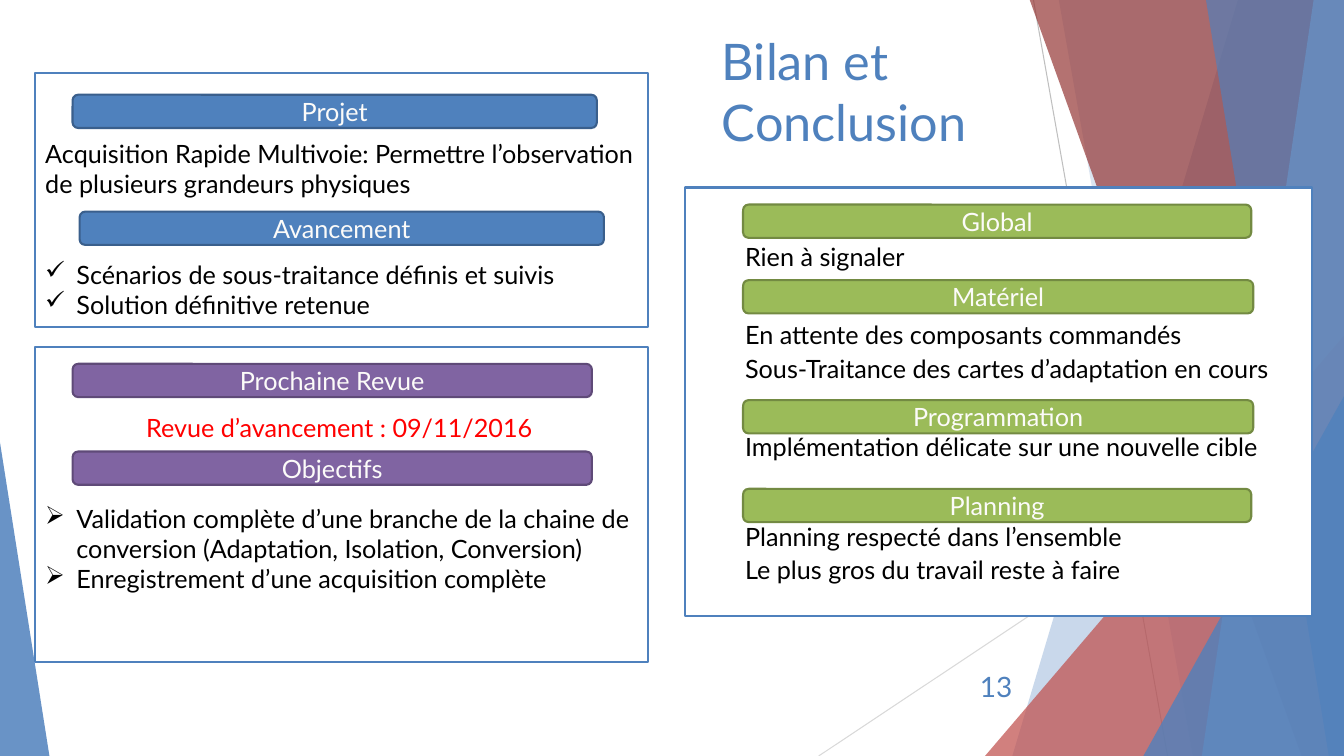
from lxml import etree
from pptx import Presentation
from pptx import util as u
from pptx.dml import color
from pptx.enum import shapes, text
from pptx.oxml import ns

COLORS = {
    "blue": "4F81BD", "blue edge": "3A5F8C", "pale blue": "95B3D7",
    "green": "9BBB59", "green edge": "738A42",
    "purple": "8064A2", "purple edge": "5F4A78",
    "red": "C0504D", "dark red": "953735", "alert": "FF0000",
    "gray": "BFBFBF", "light gray": "D9D9D9",
    "black": "000000", "white": "FFFFFF", "cream": "FCFBF9",
}
WIDTH, HEIGHT = 13.33, 7.5


class ReviewSlide:
    """Holds the style and the current page, and draws each kind of element."""

    font = "Lato"
    size = 18

    def __init__(self, deck):
        self.page = deck.slides.add_slide(deck.slide_layouts[5])

    def rgb(self, name):
        return color.RGBColor.from_string(COLORS[name])

    def paint(self, shape, fill, edge=None, opacity=None):
        shape.shadow.inherit = False
        shape.fill.solid()
        shape.fill.fore_color.rgb = self.rgb(fill)
        if edge:
            shape.line.color.rgb = self.rgb(edge)
            shape.line.width = u.Pt(1.5)
        else:
            shape.line.fill.background()
        if opacity:
            tint = shape._element.spPr.find(f"{ns.qn('a:solidFill')}/{ns.qn('a:srgbClr')}")
            etree.SubElement(tint, ns.qn("a:alpha"), val=str(opacity * 1000))

    def add_span(self, para, words, tone, size=None):
        span = para.add_run()
        span.text = words
        span.font.name = self.font
        span.font.size = u.Pt(size or self.size)
        span.font.color.rgb = self.rgb(tone)

    def line(self, start, end, tone):
        points = [u.Inches(value) for value in (*start, *end)]
        rule = self.page.shapes.add_connector(shapes.MSO_CONNECTOR.STRAIGHT, *points)
        rule.line.color.rgb = self.rgb(tone)
        rule.line.width = u.Pt(0.75)
        etree.SubElement(rule._element.spPr, ns.qn("a:effectLst"))

    def band(self, top_x, bottom_x, fill, opacity):
        corners = [(WIDTH, -0.01), (WIDTH, HEIGHT), (bottom_x, HEIGHT)]
        builder = self.page.shapes.build_freeform(u.Inches(top_x), u.Inches(-0.01))
        builder.add_line_segments([(u.Inches(x), u.Inches(y)) for x, y in corners])
        self.paint(builder.convert_to_shape(), fill, opacity=opacity)

    def shape(self, kind, area):
        return self.page.shapes.add_shape(kind, *[u.Inches(value) for value in area])

    def triangle(self, area, apex, fill, opacity):
        wedge = self.shape(shapes.MSO_SHAPE.ISOSCELES_TRIANGLE, area)
        wedge.adjustments[0] = apex
        self.paint(wedge, fill, opacity=opacity)

    def panel(self, area, inset, lines):
        box = self.shape(shapes.MSO_SHAPE.RECTANGLE, area)
        self.paint(box, "white", "blue")
        frame = box.text_frame
        frame.word_wrap = True
        frame.vertical_anchor = text.MSO_ANCHOR.TOP
        frame.margin_left, frame.margin_top = [u.Inches(value) for value in inset]
        for index, (words, gap, style) in enumerate(lines):
            para = frame.add_paragraph() if index else frame.paragraphs[0]
            para.alignment = text.PP_ALIGN.LEFT
            self.indent(para, style.get("bullet"), style.get("left"))
            if gap:
                para.space_before = u.Pt(gap)
            self.add_span(para, words, style.get("tone", "black"))

    def indent(self, para, bullet, left):
        props = para._p.get_or_add_pPr()
        if bullet:
            props.set("marL", str(u.Inches(0.31)))
            props.set("indent", str(-u.Inches(0.31)))
            etree.SubElement(props, ns.qn("a:buChar"), char=bullet)
        elif left:
            props.set("marL", str(u.Inches(left)))

    def label(self, words, left, top, width, tone):
        pill = self.shape(shapes.MSO_SHAPE.ROUNDED_RECTANGLE, (left, top, width, 0.33))
        self.paint(pill, tone, f"{tone} edge")
        frame = pill.text_frame
        frame.vertical_anchor = text.MSO_ANCHOR.MIDDLE
        frame.margin_top = frame.margin_bottom = 0
        para = frame.paragraphs[0]
        para.alignment = text.PP_ALIGN.CENTER
        self.add_span(para, words, "cream")

    def title(self, area, lines):
        box = self.page.shapes.title
        box.left, box.top, box.width, box.height = [u.Inches(value) for value in area]
        frame = box.text_frame
        frame.auto_size = text.MSO_AUTO_SIZE.NONE
        frame.vertical_anchor = text.MSO_ANCHOR.TOP
        para = frame.paragraphs[0]
        para.alignment = text.PP_ALIGN.LEFT
        for index, words in enumerate(lines):
            if index:
                para.add_line_break()
            self.add_span(para, words, "blue", 36)

    def number(self, area, words):
        box = self.page.shapes.add_textbox(*[u.Inches(value) for value in area])
        frame = box.text_frame
        frame.word_wrap = True
        frame.vertical_anchor = text.MSO_ANCHOR.MIDDLE
        para = frame.paragraphs[0]
        para.alignment = text.PP_ALIGN.RIGHT
        self.add_span(para, words, "blue", 20)


def main():
    deck = Presentation()
    deck.slide_width, deck.slide_height = u.Inches(WIDTH), u.Inches(HEIGHT)
    review = ReviewSlide(deck)

    review.line((10.25, 0), (11.58, HEIGHT), "gray")
    review.line((WIDTH, 4.03), (8.12, HEIGHT), "light gray")
    review.band(12.28, 10.04, "blue", 30)
    review.band(10.5, 11.83, "blue", 20)
    review.triangle((9.77, 3.33, 3.56, 4.17), 1, "red", 72)
    review.band(10.21, 12.91, "dark red", 70)
    review.band(13.03, 11.92, "pale blue", 70)
    review.band(11.96, 13.18, "blue", 65)
    review.triangle((11.34, 3.93, 1.99, 3.57), 1, "blue", 80)
    review.triangle((0, 4.39, 0.49, 3.11), 0, "blue", 85)

    review.title((7.06, 0.25, 5.2, 1.44), ["Bilan et", "Conclusion"])

    check, arrow = {"bullet": "✓"}, {"bullet": "➢"}
    review.panel((0.35, 0.72, 6.08, 2.52), (0.1, 0.65), [
        ("Acquisition Rapide Multivoie: Permettre l’observation de plusieurs grandeurs physiques", 0, {}),
        ("Scénarios de sous-traitance définis et suivis", 43.2, check),
        ("Solution définitive retenue", 0, check),
    ])
    review.panel((0.35, 3.44, 6.08, 3.13), (0.1, 0.65), [
        ("Revue d’avancement : 09/11/2016", 0, {"left": 1, "tone": "alert"}),
        ("Validation complète d’une branche de la chaine de conversion "
         "(Adaptation, Isolation, Conversion)", 43.2, arrow),
        ("Enregistrement d’une acquisition complète", 0, arrow),
    ])
    review.panel((6.79, 1.86, 6.22, 4.25), (0.6, 0.53), [
        ("Rien à signaler", 0, {}),
        ("En attente des composants commandés", 34.4, {}),
        ("Sous-Traitance des cartes d’adaptation en cours", 2.4, {}),
        ("Implémentation délicate sur une nouvelle cible", 34.4, {}),
        ("Planning respecté dans l’ensemble", 42.4, {}),
        ("Le plus gros du travail reste à faire", 2.4, {}),
    ])

    for words, left, top, width, tone in [
        ("Projet", 0.72, 0.94, 5.2, "blue"),
        ("Avancement", 0.79, 2.1, 5.2, "blue"),
        ("Prochaine Revue", 0.72, 3.61, 5.15, "purple"),
        ("Objectifs", 0.72, 4.48, 5.15, "purple"),
        ("Global", 7.37, 2.03, 5.04, "green"),
        ("Matériel", 7.37, 2.78, 5.06, "green"),
        ("Programmation", 7.37, 3.97, 5.06, "green"),
        ("Planning", 7.37, 4.85, 5.04, "green"),
    ]:
        review.label(words, left, top, width, tone)

    review.number((9.39, 6.61, 0.75, 0.4), "13")
    deck.save("out.pptx")


if __name__ == "__main__":
    main()
